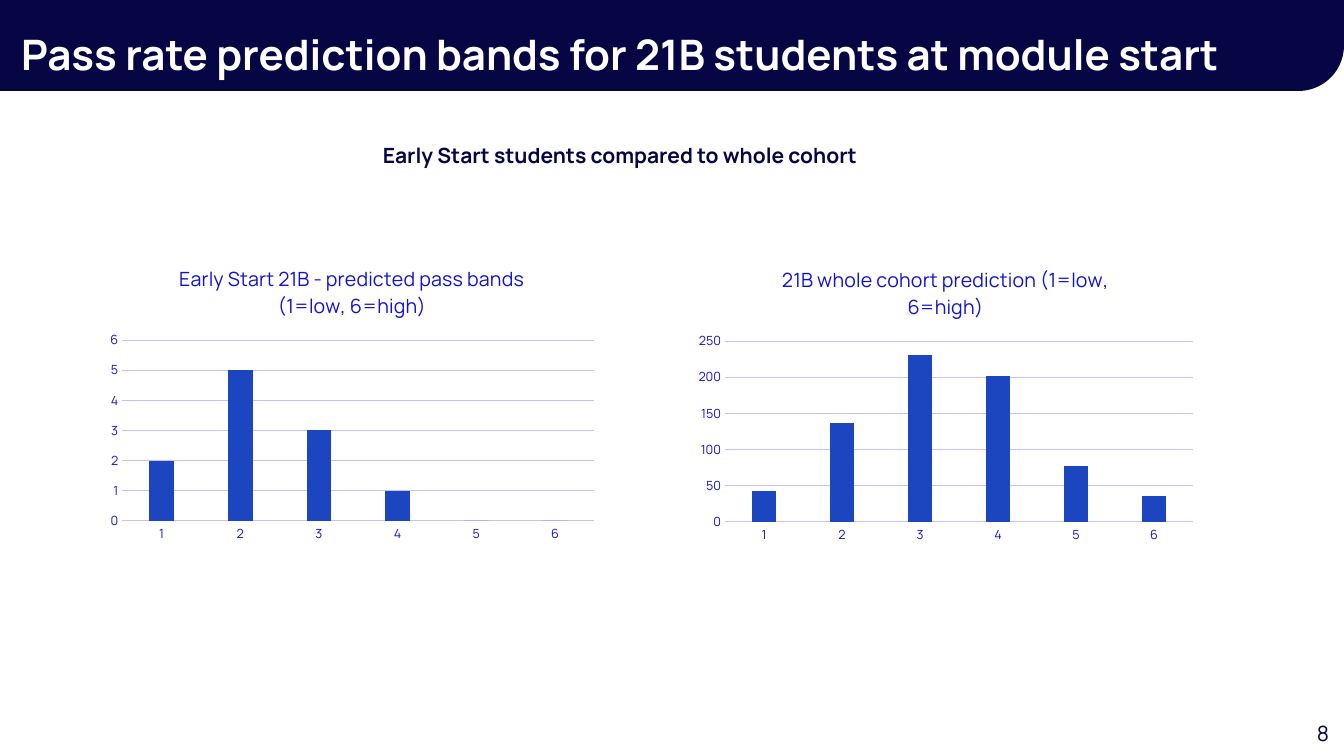
from dataclasses import dataclass

from pptx import Presentation
from pptx.chart.data import CategoryChartData
from pptx.dml.color import RGBColor
from pptx.enum.chart import XL_CHART_TYPE as ChartType, XL_TICK_MARK as TickMark
from pptx.enum.shapes import MSO_SHAPE as Preset
from pptx.enum.text import MSO_ANCHOR as Anchor, MSO_AUTO_SIZE as AutoSize, PP_ALIGN as Align
from pptx.oxml import parse_xml
from pptx.oxml.ns import nsdecls
from pptx.util import Pt

EMU_PER_PX = 914400 / 100.8


@dataclass(frozen=True)
class Theme:
    font: str = "Manrope"
    navy: str = "060645"
    white: str = "FFFFFF"
    bar: str = "1C46C0"
    chart_text: str = "1212D1"
    grid: str = "C3C3FA"
    title_size: int = 30
    body_size: int = 15
    chart_title_size: int = 14
    chart_size: int = 10
    axis_size: int = 9


def px(length):
    return round(length * EMU_PER_PX)


class SlideBuilder:
    def __init__(self, slide, theme):
        self.slide = slide
        self.theme = theme

    def style_font(self, font, size, color, bold=False):
        font.name = self.theme.font
        font.size = Pt(size)
        font.bold = bold
        font.color.rgb = RGBColor.from_string(color)

    def style_line(self, line):
        line.color.rgb = RGBColor.from_string(self.theme.grid)
        line.width = Pt(0.75)

    def fill_text(self, shape, text, size, color, bold=False, align=Align.LEFT, spacing=1.0):
        frame = shape.text_frame
        frame.text = text
        frame.word_wrap = True
        frame.auto_size = AutoSize.NONE
        frame.vertical_anchor = Anchor.TOP
        paragraph = frame.paragraphs[0]
        paragraph.alignment = align
        paragraph.line_spacing = spacing
        self.style_font(paragraph.font, size, color, bold)

    def header(self, left, top, width, height):
        shape = self.slide.shapes.add_shape(
            Preset.ROUND_1_RECTANGLE, px(left), px(top), px(width), px(height))
        shape.adjustments[0] = 0.5
        shape.shadow.inherit = False
        shape.fill.solid()
        shape.fill.fore_color.rgb = RGBColor.from_string(self.theme.navy)
        shape.line.fill.background()
        shape._element.spPr.xfrm.set("flipV", "1")
        # The band lies behind the title
        self.slide.shapes._spTree.insert(2, shape._element)

    def title(self, text, left, top, width, height):
        shape = self.slide.shapes.title
        shape.left, shape.top = px(left), px(top)
        shape.width, shape.height = px(width), px(height)
        self.fill_text(shape, text, self.theme.title_size, self.theme.white,
                       bold=True, spacing=1.1)

    def text(self, text, left, top, width, height, **style):
        shape = self.slide.shapes.add_textbox(px(left), px(top), px(width), px(height))
        self.fill_text(shape, text, self.theme.body_size, self.theme.navy, **style)

    def column_chart(self, title, values, box, plot, maximum, step):
        theme = self.theme
        data = CategoryChartData()
        data.categories = [str(band) for band in range(1, len(values) + 1)]
        data.add_series("Series 1", values)
        chart = self.slide.shapes.add_chart(
            ChartType.COLUMN_CLUSTERED, *map(px, box), data).chart
        self.style_font(chart.font, theme.chart_size, theme.navy)
        chart.has_legend = False

        # Chart title
        chart.has_title = True
        chart.chart_title.include_in_layout = False
        frame = chart.chart_title.text_frame
        frame.text = title
        self.style_font(frame.paragraphs[0].font, theme.chart_title_size, theme.chart_text)

        # Columns
        columns = chart.plots[0]
        columns.gap_width = 219
        columns.overlap = -27
        columns.vary_by_categories = False
        fill = columns.series[0].format.fill
        fill.solid()
        fill.fore_color.rgb = RGBColor.from_string(theme.bar)

        # Axes
        for axis in (chart.category_axis, chart.value_axis):
            axis.major_tick_mark = axis.minor_tick_mark = TickMark.NONE
            self.style_font(axis.tick_labels.font, theme.axis_size, theme.chart_text)
        self.style_line(chart.category_axis.format.line)
        value_axis = chart.value_axis
        value_axis.minimum_scale, value_axis.maximum_scale = 0, maximum
        value_axis.major_unit = step
        value_axis.format.line.fill.background()
        value_axis.has_major_gridlines = True
        self.style_line(value_axis.major_gridlines.format.line)
        self.place_plot(chart, box, plot)

    def place_plot(self, chart, box, plot):
        left, top, width, height = box
        fractions = {
            "x": (plot[0] - left) / width, "y": (plot[1] - top) / height,
            "w": plot[2] / width, "h": plot[3] / height}
        modes = "".join(f'<c:{name}Mode val="edge"/>' for name in "xy")
        sizes = "".join(f'<c:{name} val="{value:.3f}"/>' for name, value in fractions.items())
        plot_area = chart._chartSpace.chart.plotArea
        for layout in plot_area.findall("{*}layout"):
            plot_area.remove(layout)
        plot_area.insert(0, parse_xml(
            f'<c:layout {nsdecls("c")}><c:manualLayout><c:layoutTarget val="inner"/>'
            f'{modes}{sizes}</c:manualLayout></c:layout>'))


def main():
    presentation = Presentation()
    presentation.slide_width, presentation.slide_height = px(1344), px(756)
    slide = presentation.slides.add_slide(presentation.slide_layouts[5])
    builder = SlideBuilder(slide, Theme())

    # Heading
    builder.header(-1, 0, 1345, 91)
    builder.title("Pass rate prediction bands for 21B students at module start", 11, 18, 1291, 56)
    builder.text("Early Start students compared to whole cohort", 373, 135, 629, 39,
                 bold=True, spacing=1.1)

    # Charts of the whole cohort and the early starters
    builder.column_chart(
        "21B whole cohort prediction (1=low, 6=high)", (43, 136, 230, 201, 77, 36),
        box=(688, 249, 515, 300), plot=(725, 341, 468, 181), maximum=250, step=50)
    builder.column_chart(
        "Early Start 21B - predicted pass bands (1=low, 6=high)", (2, 5, 3, 1, 0, 0),
        box=(100, 248, 504, 302), plot=(122, 340, 472, 181), maximum=6, step=1)

    # Slide number
    builder.text("8", 1269, 716, 70, 35, align=Align.RIGHT)
    presentation.save("out.pptx")


if __name__ == "__main__":
    main()
